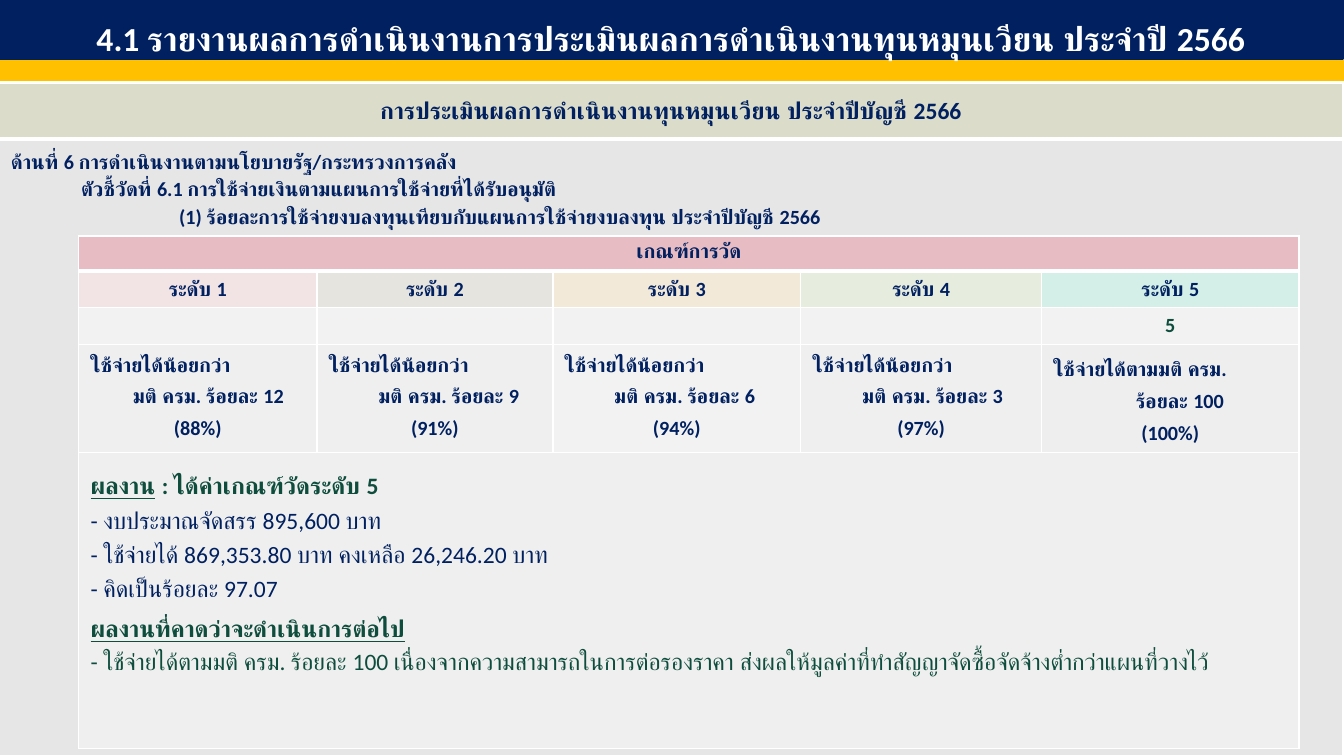
from lxml import etree
from pptx import Presentation
from pptx.dml.color import RGBColor
from pptx.enum.shapes import MSO_SHAPE
from pptx.enum.text import MSO_ANCHOR, MSO_AUTO_SIZE, PP_ALIGN
from pptx.oxml.ns import qn
from pptx.util import Inches, Pt

COLOURS = {
    "navy": "002060", "gold": "FFC000", "white": "FFFFFF", "green": "0E4D3C",
    "sage": "DBDCC9", "grey": "E7E6E6", "pale": "F2F2F2", "rose": "E8ABB5",
    "level 1": "FAE4E5", "level 2": "E6E4DF", "level 3": "FCEBD1",
    "level 4": "E8F3DA", "level 5": "C8F5E8",
}


def add_span(para, text, size=12, colour="navy", bold=True, underline=False):
    span = para.add_run()
    span.text = text
    span.font.name = "Calibri"
    span.font.size = Pt(size)
    span.font.bold = bold
    span.font.underline = underline
    span.font.color.rgb = RGBColor.from_string(COLOURS[colour])


def style_cell(cell, colour, opacity=100, top=1, bottom=1):
    properties = cell._tc.get_or_add_tcPr()
    for side, width in (("L", 1), ("R", 1), ("T", top), ("B", bottom)):
        line = etree.SubElement(properties, qn(f"a:ln{side}"), w=str(Pt(width)))
        line_fill = etree.SubElement(line, qn("a:solidFill"))
        etree.SubElement(line_fill, qn("a:srgbClr"), val=COLOURS["white"])
    cell.fill.solid()
    cell.fill.fore_color.rgb = RGBColor.from_string(COLOURS[colour])
    if opacity < 100:
        shade = properties.find(qn("a:solidFill")).find(qn("a:srgbClr"))
        etree.SubElement(shade, qn("a:alpha"), val=str(opacity * 1000))


deck = Presentation()
deck.slide_width = Inches(11.11)
deck.slide_height = Inches(6.25)
page = deck.slides.add_slide(deck.slide_layouts[5])

# Title bar, in front of the gold band
title = page.shapes.title
title.left, title.top = Inches(-0.01), Inches(-0.02)
title.width, title.height = Inches(11.11), Inches(0.51)
band = page.shapes.add_shape(
    MSO_SHAPE.RECTANGLE, Inches(0), Inches(0.5), Inches(11.11), Inches(0.16))
band.shadow.inherit = False
title.element.addprevious(band.element)
for bar, colour in ((title, "navy"), (band, "gold")):
    bar.fill.solid()
    bar.fill.fore_color.rgb = RGBColor.from_string(COLOURS[colour])
    bar.line.color.rgb = RGBColor.from_string(COLOURS[colour])
    bar.line.width = Pt(1)
title.text_frame.auto_size = MSO_AUTO_SIZE.NONE
title.text_frame.word_wrap = True
title.text_frame.vertical_anchor = MSO_ANCHOR.MIDDLE
para = title.text_frame.paragraphs[0]
para.alignment = PP_ALIGN.CENTER
para.line_spacing = 1.5
para.space_before = Pt(0)
add_span(para, "4.1 รายงานผลการดำเนินงานการประเมินผลการดำเนินงานทุนหมุนเวียน ประจำปี 2566",
         20, "white")

# Outer table: section heading and indicator
section = page.shapes.add_table(
    2, 1, Inches(-0.01), Inches(0.69), Inches(11.11), Inches(5.56)).table
section.first_row = section.horz_banding = False
section.rows[0].height, section.rows[1].height = Inches(0.46), Inches(5.1)
heading, indicator = section.cell(0, 0), section.cell(1, 0)
style_cell(heading, "sage", bottom=3)
style_cell(indicator, "grey", top=3)
for cell in (heading, indicator):
    cell.margin_top = cell.margin_bottom = Inches(0.07)
heading.vertical_anchor = MSO_ANCHOR.MIDDLE
para = heading.text_frame.paragraphs[0]
para.alignment = PP_ALIGN.CENTER
add_span(para, "การประเมินผลการดำเนินงานทุนหมุนเวียน ประจำปีบัญชี 2566", 14)

indicator_lines = [
    (0, "ด้านที่ 6 การดำเนินงานตามนโยบายรัฐ/กระทรวงการคลัง"),
    (0.58, "ตัวชี้วัดที่ 6.1 การใช้จ่ายเงินตามแผนการใช้จ่ายที่ได้รับอนุมัติ"),
    (1.39, "(1) ร้อยละการใช้จ่ายงบลงทุนเทียบกับแผนการใช้จ่ายงบลงทุน ประจำปีบัญชี 2566"),
]
frame = indicator.text_frame
for number, (indent, text) in enumerate(indicator_lines):
    para = frame.add_paragraph() if number else frame.paragraphs[0]
    para._p.get_or_add_pPr().set("marL", str(Inches(indent)))
    para.line_spacing = 1.1
    para.space_after = Pt(0.5)
    add_span(para, text)

# Criteria table
criteria = page.shapes.add_table(
    5, 5, Inches(0.65), Inches(1.95), Inches(10.1), Inches(4.15)).table
criteria.first_row = criteria.horz_banding = False
for column, width in zip(criteria.columns, (1.97, 1.95, 2.05, 1.99, 2.13)):
    column.width = Inches(width)
for row, height in zip(criteria.rows, (0.29, 0.29, 0.29, 0.83, 2.45)):
    row.height = Inches(height)
for row in (0, 4):
    criteria.cell(row, 0).merge(criteria.cell(row, 4))

for column in range(5):
    style_cell(criteria.cell(0, column), "rose", 70, bottom=3)
    style_cell(criteria.cell(4, column), "pale", 80)
para = criteria.cell(0, 0).text_frame.paragraphs[0]
para.alignment = PP_ALIGN.CENTER
add_span(para, "เกณฑ์การวัด")

# Levels: condition, share, indent of the second line, fill opacities
below = "ใช้จ่ายได้น้อยกว่า"
levels = [
    (below, "มติ ครม. ร้อยละ 12", "(88%)", 0.35, 60, 80),
    (below, "มติ ครม. ร้อยละ 9", "(91%)", 0.41, 96, 80),
    (below, "มติ ครม. ร้อยละ 6", "(94%)", 0.41, 60, 100),
    (below, "มติ ครม. ร้อยละ 3", "(97%)", 0.41, 60, 80),
    ("ใช้จ่ายได้ตามมติ ครม.", "ร้อยละ 100", "(100%)", 0.68, 60, 70),
]
for column, (condition, share, percent, indent, level_opacity, opacity) in enumerate(levels):
    level_cell, score_cell, rule_cell = (criteria.cell(row, column) for row in (1, 2, 3))
    style_cell(level_cell, f"level {column + 1}", level_opacity)
    style_cell(score_cell, "pale")
    style_cell(rule_cell, "pale", opacity)

    para = level_cell.text_frame.paragraphs[0]
    para.alignment = PP_ALIGN.CENTER
    add_span(para, f"ระดับ {column + 1}")

    score_cell.vertical_anchor = MSO_ANCHOR.MIDDLE
    para = score_cell.text_frame.paragraphs[0]
    para.alignment = PP_ALIGN.CENTER
    if column == 4:
        add_span(para, "5", colour="green")
    else:
        etree.SubElement(para._p, qn("a:endParaRPr"), sz="1200")

    frame = rule_cell.text_frame
    rule_lines = [(condition, 0, PP_ALIGN.LEFT), (share, indent, PP_ALIGN.LEFT),
                  (percent, 0, PP_ALIGN.CENTER)]
    for number, (text, left, alignment) in enumerate(rule_lines):
        para = frame.add_paragraph() if number else frame.paragraphs[0]
        para._p.get_or_add_pPr().set("marL", str(Inches(left)))
        para.alignment = alignment
        para.line_spacing = 1.3
        add_span(para, text)

# Results: line spacing, space before, spans of (text, colour, bold, underline)
results = [
    (1.5, 0, [("ผลงาน", "green", True, True),
              (" : ได้ค่าเกณฑ์วัดระดับ 5", "green", True, False)]),
    (1.2, 0, [("- งบประมาณจัดสรร 895,600 บาท", "navy", False, False)]),
    (1.2, 0, [("- ใช้จ่ายได้ 869,353.80 บาท คงเหลือ 26,246.20 บาท", "navy", False, False)]),
    (1.2, 0, [("- คิดเป็นร้อยละ 97.07", "navy", False, False)]),
    (1.2, 6, [("ผลงานที่คาดว่าจะดำเนินการต่อไป", "green", True, True)]),
    (1.2, 0, [("- ใช้จ่ายได้ตามมติ ครม. ร้อยละ 100 เนื่องจากความสามารถในการต่อรองราคา "
               "ส่งผลให้มูลค่าที่ทำสัญญาจัดซื้อจัดจ้างต่ำกว่าแผนที่วางไว้", "green", False, False)]),
]
frame = criteria.cell(4, 0).text_frame
for number, (spacing, before, spans) in enumerate(results):
    para = frame.add_paragraph() if number else frame.paragraphs[0]
    para.line_spacing = spacing
    para.space_before = Pt(before)
    for text, colour, bold, underline in spans:
        add_span(para, text, 14, colour, bold, underline)

deck.save("out.pptx")
